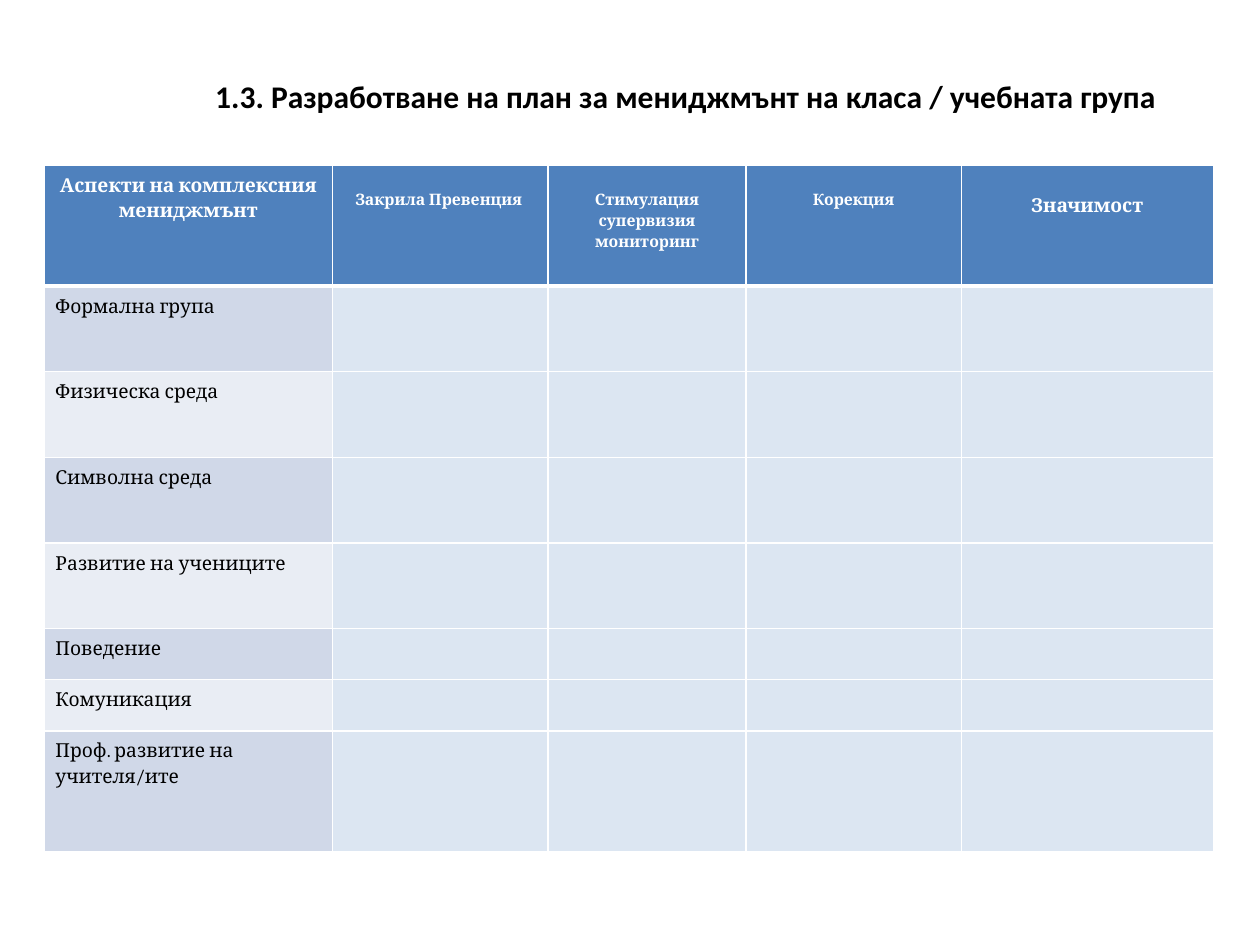
from lxml.etree import SubElement
from pptx import Presentation
from pptx.dml.color import RGBColor
from pptx.enum.text import MSO_ANCHOR, MSO_AUTO_SIZE, PP_ALIGN
from pptx.oxml.ns import qn
from pptx.util import Inches, Pt

# Content
TITLE = "1.3. Разработване на план за мениджмънт на класа / учебната група"
# (text, type size, starts one line lower)
HEADERS = [
    ("Аспекти на комплексния мениджмънт", 11, False),
    ("Закрила Превенция ", 9, True),
    ("Стимулация супервизия мониторинг", 9, True),
    ("Корекция", 9, True),
    ("Значимост", 11, True),
]
# (text, row height, alignment)
ASPECTS = [
    ("Формална група ", 0.68, PP_ALIGN.JUSTIFY),
    ("Физическа среда ", 0.68, PP_ALIGN.JUSTIFY),
    ("Символна среда ", 0.68, PP_ALIGN.JUSTIFY),
    ("Развитие на учениците", 0.68, PP_ALIGN.LEFT),
    ("Поведение ", 0.4, PP_ALIGN.JUSTIFY),
    ("Комуникация ", 0.4, PP_ALIGN.JUSTIFY),
    ("Проф. развитие на учителя/ите", 0.96, PP_ALIGN.LEFT),
]
COL_WIDTHS = [2.29, 1.71, 1.57, 1.71, 2]
HEADER_HEIGHT = 0.96

THEME = {
    "title_font": "Calibri", "title_size": 18,
    "table_font": "Cambria", "body_size": 11,
    "dark": "000000", "light": "FFFFFF",
    "header": "4F81BD", "bands": ("D0D8E8", "E9EDF4"), "empty": "DCE6F2",
}


def add_run(p, text, font, size, color, bold):
    r = p.add_run()
    r.text = text
    r.font.name, r.font.size, r.font.bold = font, Pt(size), bold
    r.font.color.rgb = RGBColor.from_string(color)


def style_cell(cell, fill, top=1, bottom=1):
    cell.margin_left = cell.margin_right = Inches(0.09)
    cell.margin_top = cell.margin_bottom = Inches(0.05)
    cell.vertical_anchor = MSO_ANCHOR.TOP
    # Borders come before the fill in the cell properties
    tc_pr = cell._tc.get_or_add_tcPr()
    for side, width in (("L", 1), ("R", 1), ("T", top), ("B", bottom)):
        ln = SubElement(tc_pr, qn(f"a:ln{side}"), w=str(Pt(width)))
        solid = SubElement(ln, qn("a:solidFill"))
        SubElement(solid, qn("a:srgbClr"), val=THEME["light"])
    cell.fill.solid()
    cell.fill.fore_color.rgb = RGBColor.from_string(fill)


def write_cell(cell, text, size, color, bold, align):
    p = cell.text_frame.paragraphs[0]
    p.alignment, p.line_spacing = align, 1.15
    add_run(p, text, THEME["table_font"], size, color, bold)


prs = Presentation()
prs.slide_width, prs.slide_height = Inches(10), Inches(7.5)
s = prs.slides.add_slide(prs.slide_layouts[6])

# Table grid
heights = [HEADER_HEIGHT] + [height for _, height, _ in ASPECTS]
table = s.shapes.add_table(
    len(heights), len(COL_WIDTHS), Inches(0.35), Inches(1.31),
    Inches(sum(COL_WIDTHS)), Inches(sum(heights))).table
for col, width in zip(table.columns, COL_WIDTHS):
    col.width = Inches(width)
for row, height in zip(table.rows, heights):
    row.height = Inches(height)

# Header row
for c, (text, size, lowered) in enumerate(HEADERS):
    cell = table.cell(0, c)
    style_cell(cell, THEME["header"], bottom=3)
    if lowered:
        cell.margin_top = Inches(0.05 + round(size * 0.015, 2))
    write_cell(cell, text, size, THEME["light"], True, PP_ALIGN.CENTER)

# Aspect rows: banded first column, empty cells to fill in
for i, (text, _, align) in enumerate(ASPECTS):
    for c in range(len(COL_WIDTHS)):
        fill = THEME["empty"] if c else THEME["bands"][i % 2]
        style_cell(table.cell(i + 1, c), fill, top=1 if i else 3)
    write_cell(table.cell(i + 1, 0), text, THEME["body_size"],
               THEME["dark"], False, align)

# Title
sp = s.shapes.add_textbox(Inches(1.61), Inches(0.56), Inches(7.75), Inches(0.4))
tf = sp.text_frame
tf.word_wrap = False
tf.auto_size = MSO_AUTO_SIZE.SHAPE_TO_FIT_TEXT
add_run(tf.paragraphs[0], TITLE, THEME["title_font"], THEME["title_size"],
        THEME["dark"], True)

prs.save("out.pptx")
